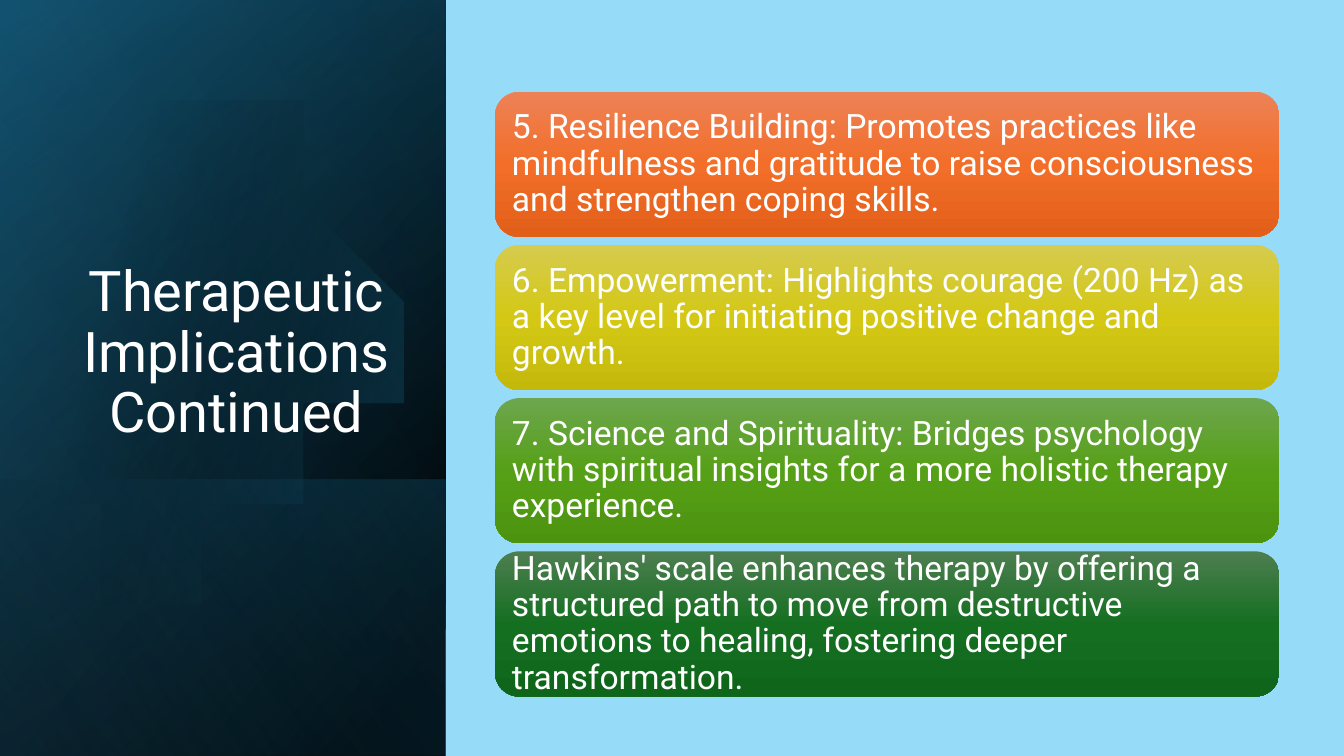
from dataclasses import dataclass

import pptx
import pptx.dml.color
import pptx.enum.shapes
import pptx.enum.text
import pptx.oxml
import pptx.oxml.ns
import pptx.util
from pptx.util import Inches

RGB = pptx.dml.color.RGBColor
SHAPE = pptx.enum.shapes.MSO_SHAPE
ALIGN = pptx.enum.text.PP_ALIGN
ANCHOR = pptx.enum.text.MSO_ANCHOR

SKY = RGB(0x96, 0xDC, 0xF8)
WHITE = RGB(0xFF, 0xFF, 0xFF)
BLACK = RGB(0x00, 0x00, 0x00)
NAVY = RGB(0x10, 0x48, 0x62)
TEAL = RGB(0x15, 0x60, 0x82)
AZURE = RGB(0x46, 0xB1, 0xE1)
ORANGES = RGB(0xED, 0x82, 0x57), RGB(0xF2, 0x6E, 0x29), RGB(0xE2, 0x5F, 0x1A)
YELLOWS = RGB(0xD5, 0xCB, 0x4E), RGB(0xD4, 0xC8, 0x15), RGB(0xC4, 0xB9, 0x0B)
LIMES = RGB(0x6D, 0xA6, 0x4E), RGB(0x56, 0xA0, 0x17), RGB(0x4C, 0x93, 0x0F)
GREENS = RGB(0x4D, 0x7E, 0x50), RGB(0x15, 0x6F, 0x21), RGB(0x0F, 0x66, 0x1B)
FONT = "Roboto"


@dataclass
class Stop:
    pos: int
    color: RGB
    alpha: int = 100


@dataclass
class Gradient:
    angle: int
    stops: list[Stop]


@dataclass
class Layer:
    top: float
    height: float
    gradient: Gradient


@dataclass
class Card:
    colors: tuple[RGB, RGB, RGB]
    text: str


PANEL_W, SLIDE_H = 4.42, 7.5
BASE_LAYERS = [
    Layer(0, SLIDE_H, Gradient(50, [Stop(8, BLACK), Stop(100, NAVY)])),
    Layer(0, SLIDE_H, Gradient(30, [Stop(0, BLACK, 0), Stop(99, TEAL, 46)])),
    Layer(4.76, 2.74, Gradient(130, [Stop(2, TEAL, 29), Stop(100, BLACK, 30)])),
]
TOP_LAYER = Layer(0, SLIDE_H, Gradient(120, [Stop(0, BLACK, 0), Stop(99, AZURE, 11)]))
DISC_GRADIENT = Gradient(14, [Stop(29, BLACK, 0), Stop(100, TEAL, 43)])

# Disc outline: a start point, then Bezier curves (3 points) and lines (1 point)
DISC_START = (1.49, 1.1)
DISC_SEGMENTS = [
    [(2.46, 1.12), (3.35, 1.77), (3.63, 2.75)],
    [(3.98, 3.97), (3.28, 5.23), (2.07, 5.58)],
    [(1.31, 5.8), (0.53, 5.61), (-0.03, 5.14)],
    [(-0.15, 5.03)],
    [(-0.15, 1.75)],
    [(0, 1.61)],
    [(0.23, 1.42), (0.5, 1.28), (0.8, 1.19)],
    [(1.03, 1.13), (1.26, 1.1), (1.49, 1.1)],
]
CURVE_STEPS = 24

CARD_LEFT, CARD_TOP, CARD_W, CARD_H = 4.91, 0.91, 7.78, 1.44
CARD_PITCH, CARD_INSET = 1.52, 0.07
CARDS = [
    Card(ORANGES, "5. Resilience Building: Promotes practices like mindfulness and "
                  "gratitude to raise consciousness and strengthen coping skills."),
    Card(YELLOWS, "6. Empowerment: Highlights courage (200 Hz) as a key level for "
                  "initiating positive change and growth."),
    Card(LIMES, "7. Science and Spirituality: Bridges psychology with spiritual "
                "insights for a more holistic therapy experience."),
    Card(GREENS, "Hawkins' scale enhances therapy by offering a structured path to move "
                 "from destructive emotions to healing, fostering deeper transformation."),
]


def style_shape(sp, gradient: Gradient) -> None:
    """Fill with a gradient that may be see-through; no line, no shadow."""
    sp.shadow.inherit = False
    sp.line.fill.background()
    sp.fill.background()
    stops = "".join(
        f'<a:gs pos="{s.pos * 1000}"><a:srgbClr val="{s.color}">'
        f'<a:alpha val="{s.alpha * 1000}"/></a:srgbClr></a:gs>'
        for s in gradient.stops
    )
    grad = pptx.oxml.parse_xml(
        f'<a:gradFill {pptx.oxml.ns.nsdecls("a")} rotWithShape="1">'
        f'<a:gsLst>{stops}</a:gsLst>'
        f'<a:lin ang="{gradient.angle * 60000}" scaled="0"/></a:gradFill>'
    )
    sp_pr = sp._element.spPr
    sp_pr.replace(sp_pr.find(pptx.oxml.ns.qn("a:noFill")), grad)


def add_layer(shapes, layer: Layer) -> None:
    """Cover a band of the left panel with a quarter-turned, mirrored rectangle."""
    left = (PANEL_W - layer.height) / 2
    top = layer.top + (layer.height - PANEL_W) / 2
    sp = shapes.add_shape(SHAPE.RECTANGLE, Inches(left), Inches(top),
                          Inches(layer.height), Inches(PANEL_W))
    sp.rotation = 90
    sp._element.spPr.xfrm.set("flipH", "1")
    style_shape(sp, layer.gradient)


def disc_points() -> list[tuple[float, float]]:
    points, start = [], DISC_START
    for segment in DISC_SEGMENTS:
        if len(segment) == 3:
            for i in range(1, CURVE_STEPS):
                t = i / CURVE_STEPS
                u = 1 - t
                weights = u ** 3, 3 * u * u * t, 3 * u * t * t, t ** 3
                controls = [start, *segment]
                points.append((sum(w * c[0] for w, c in zip(weights, controls)),
                               sum(w * c[1] for w, c in zip(weights, controls))))
        start = segment[-1]
        points.append(start)
    return points


def add_disc(shapes) -> None:
    builder = shapes.build_freeform(*DISC_START, scale=Inches(1))
    builder.add_line_segments(disc_points(), close=True)
    style_shape(builder.convert_to_shape(), DISC_GRADIENT)


def add_text(shapes, left: float, top: float, width: float, height: float,
             text: str, size: int, align: ALIGN, anchor: ANCHOR):
    box = shapes.add_textbox(Inches(left), Inches(top), Inches(width), Inches(height))
    tf = box.text_frame
    tf.word_wrap = True
    tf.vertical_anchor = anchor
    p = tf.paragraphs[0]
    p.alignment = align
    p.line_spacing = 0.9
    r = p.add_run()
    r.text = text
    r.font.name = FONT
    r.font.size = pptx.util.Pt(size)
    r.font.color.rgb = WHITE
    return tf


def add_card(shapes, index: int, card: Card) -> None:
    top = CARD_TOP + index * CARD_PITCH
    sp = shapes.add_shape(SHAPE.ROUNDED_RECTANGLE, Inches(CARD_LEFT), Inches(top),
                          Inches(CARD_W), Inches(CARD_H))
    stops = [Stop(pos, color) for pos, color in zip((0, 50, 100), card.colors)]
    style_shape(sp, Gradient(90, stops))
    tf = add_text(shapes, CARD_LEFT + CARD_INSET, top + CARD_INSET,
                  CARD_W - 2 * CARD_INSET, CARD_H - 2 * CARD_INSET,
                  card.text, 24, ALIGN.LEFT, ANCHOR.MIDDLE)
    tf.margin_left = tf.margin_right = tf.margin_top = tf.margin_bottom = Inches(0.1)


def main() -> None:
    prs = pptx.Presentation()
    prs.slide_width, prs.slide_height = Inches(13.33), Inches(SLIDE_H)
    s = prs.slides.add_slide(prs.slide_layouts[6])
    s.background.fill.solid()
    s.background.fill.fore_color.rgb = SKY

    # Left panel
    for layer in BASE_LAYERS:
        add_layer(s.shapes, layer)
    add_disc(s.shapes)
    add_layer(s.shapes, TOP_LAYER)
    add_text(s.shapes, 0.64, 1.84, 3.41, 2.62, "Therapeutic Implications Continued",
             40, ALIGN.CENTER, ANCHOR.BOTTOM)

    # Cards
    group = s.shapes.add_group_shape()
    for index, card in enumerate(CARDS):
        add_card(group.shapes, index, card)

    prs.save("out.pptx")


if __name__ == "__main__":
    main()
